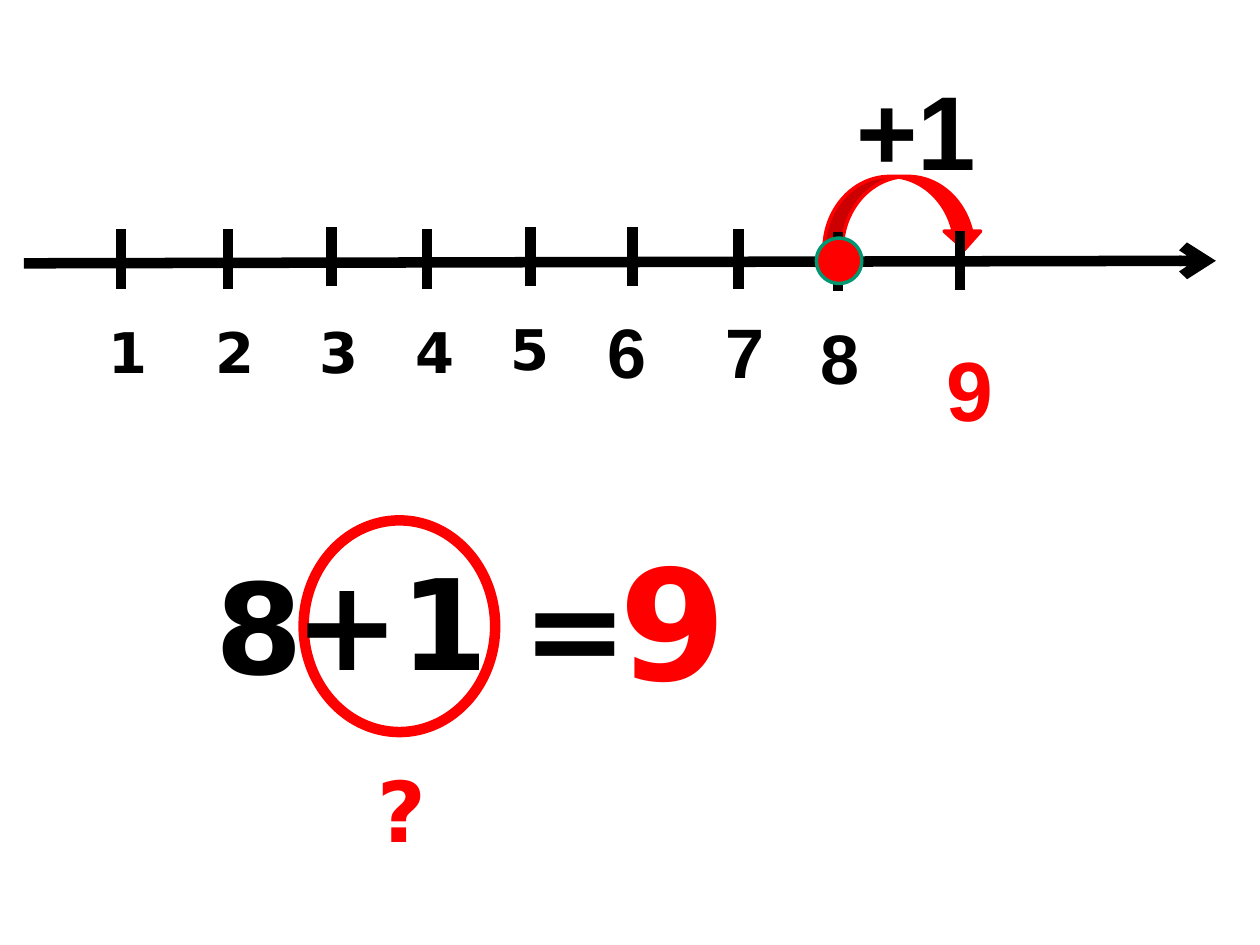
import pptx
import pptx.util
import pptx.oxml
import pptx.oxml.ns
from pptx.dml.color import RGBColor
from pptx.enum.shapes import MSO_CONNECTOR, MSO_SHAPE
from pptx.enum.text import MSO_AUTO_SIZE, PP_ALIGN
from pptx.util import Inches, Pt

BLACK = RGBColor(0x00, 0x00, 0x00)
RED = RGBColor(0xFF, 0x00, 0x00)
GREEN = RGBColor(0x00, 0x97, 0x71)
SANS, ARIAL = "DejaVu Sans", "Arial"

AXIS = (0.19, 2.09, 9.65, 2.07)
TICK_LENGTH = 0.47
# tick x, tick top
TICKS = [(0.96, 1.82), (1.81, 1.82), (2.63, 1.8), (3.39, 1.82), (4.21, 1.8),
         (5.02, 1.8), (5.86, 1.82), (6.65, 1.84), (7.62, 1.83)]

# text, left, top, width, height, size, font, colour
NUMBERS = [
    ("1", 0.76, 2.47, 0.39, 0.64, 32, SANS, BLACK),
    ("2", 1.61, 2.47, 0.39, 0.64, 32, SANS, BLACK),
    ("3", 2.44, 2.47, 0.39, 0.64, 32, SANS, BLACK),
    ("4", 3.2, 2.47, 0.39, 0.64, 32, SANS, BLACK),
    ("5", 3.95, 2.45, 0.39, 0.64, 32, SANS, BLACK),
    ("6", 4.72, 2.4, 0.39, 0.77, 40, ARIAL, BLACK),
    ("7", 5.66, 2.4, 0.39, 0.77, 40, ARIAL, BLACK),
    ("8", 6.41, 2.45, 0.39, 0.77, 40, ARIAL, BLACK),
    ("9", 7.41, 2.63, 0.39, 0.91, 48, ARIAL, RED),
    ("+1", 6.7, 0.47, 1.74, 1.63, 60, ARIAL, BLACK),
]
EQUATION = [
    ("8\t=", 1.61, 4.3, 5.2, 1.31, 72, SANS, BLACK),
    ("+1", 2.24, 4.27, 2.28, 1.31, 72, SANS, BLACK),
    ("9", 4.82, 4.13, 1.04, 1.58, 88, SANS, RED),
    ("?", 2.9, 5.97, 0.39, 0.91, 48, SANS, RED),
]
EQUALS_TAB = 2.44  # from the left edge of the equation's text


def add_line(slide, x1, y1, x2, y2):
    line = slide.shapes.add_connector(
        MSO_CONNECTOR.STRAIGHT, Inches(x1), Inches(y1), Inches(x2), Inches(y2))
    line.line.color.rgb = BLACK
    line.line.width = Pt(6)
    properties = line._element.spPr
    properties.append(properties.makeelement(pptx.oxml.ns.qn("a:effectLst"), {}))
    return line


def add_arrowhead(line):
    outline = line.line._get_or_add_ln()
    outline.append(outline.makeelement(pptx.oxml.ns.qn("a:tailEnd"), {"type": "arrow"}))


def add_figure(slide, preset, place, fill, outline, width):
    figure = slide.shapes.add_shape(preset, *map(Inches, place))
    figure.shadow.inherit = False
    if fill is None:
        figure.fill.background()
    else:
        figure.fill.solid()
        figure.fill.fore_color.rgb = fill
    figure.line.color.rgb = outline
    figure.line.width = Pt(width)


def add_text(slide, text, left, top, width, height, size, font, colour):
    box = slide.shapes.add_textbox(*map(Inches, (left, top, width, height)))
    frame = box.text_frame
    frame.word_wrap = True
    frame.auto_size = MSO_AUTO_SIZE.SHAPE_TO_FIT_TEXT
    para = frame.paragraphs[0]
    para.alignment = PP_ALIGN.LEFT
    if "\t" in text:
        add_tab_stop(para, EQUALS_TAB)
    span = para.add_run()
    span.text = text
    span.font.name = font
    span.font.size = Pt(size)
    span.font.bold = True
    span.font.color.rgb = colour


def add_tab_stop(para, position):
    properties = para._p.get_or_add_pPr()
    stops = properties.makeelement(pptx.oxml.ns.qn("a:tabLst"), {})
    stops.append(stops.makeelement(
        pptx.oxml.ns.qn("a:tab"), {"pos": str(Inches(position)), "algn": "l"}))
    properties.append(stops)


def main():
    deck = pptx.Presentation()
    deck.slide_width, deck.slide_height = Inches(10), Inches(7.5)
    page = deck.slides.add_slide(deck.slide_layouts[6])

    add_arrowhead(add_line(page, *AXIS))
    add_figure(page, MSO_SHAPE.CURVED_DOWN_ARROW, (6.54, 1.4, 1.26, 0.58), RED, RED, 2)
    for x, top in TICKS:
        add_line(page, x, top, x, top + TICK_LENGTH)
    for number in NUMBERS:
        add_text(page, *number)
    add_figure(page, MSO_SHAPE.OVAL, (6.48, 1.89, 0.36, 0.36), RED, GREEN, 2)

    add_figure(page, MSO_SHAPE.OVAL, (2.41, 4.13, 1.52, 1.68), None, RED, 6)
    for part in EQUATION:
        add_text(page, *part)

    deck.save("out.pptx")


if __name__ == "__main__":
    main()
